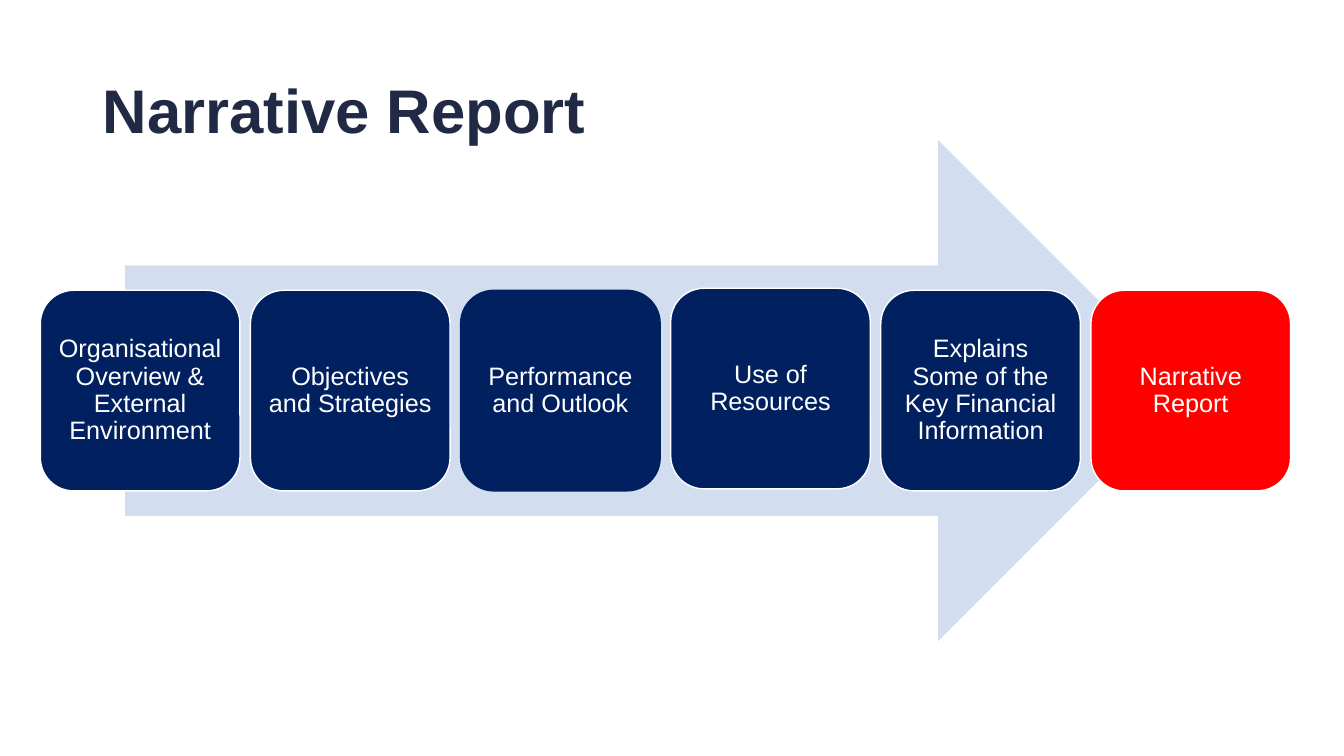
from pptx import Presentation
from pptx.dml.color import RGBColor
from pptx.enum.shapes import MSO_SHAPE
from pptx.enum.text import MSO_ANCHOR, PP_ALIGN
from pptx.util import Inches, Pt

NAVY, RED, WHITE = "002060", "FF0000", "FFFFFF"
LEFT, TOP, PITCH = 0.4, 2.88, 2.084
WIDE, HIGH = 1.98, 1.99
STEPS = [
    ("Organisational Overview & External Environment", NAVY, WHITE, 0),
    ("Objectives and Strategies", NAVY, WHITE, 0),
    ("Performance and Outlook", NAVY, NAVY, 0),
    ("Use of Resources", NAVY, WHITE, 0.02),
    ("Explains Some of the Key Financial Information", NAVY, WHITE, 0),
    ("Narrative Report", RED, WHITE, 0),
]


def paint(target, color):
    target.rgb = RGBColor.from_string(color)


def write(shape, text, size=18, color=WHITE, bold=False, align=PP_ALIGN.CENTER, inset=0.07):
    frame = shape.text_frame
    frame.word_wrap = True
    frame.vertical_anchor = MSO_ANCHOR.MIDDLE
    frame.margin_left = frame.margin_right = Inches(inset)
    frame.margin_top = frame.margin_bottom = Inches(0.07)
    frame.text = text
    para = frame.paragraphs[0]
    para.alignment = align
    para.line_spacing = 0.9
    font = para.runs[0].font
    font.name, font.size, font.bold = "Arial", Pt(size), bold
    paint(font.color, color)


def block(slide, kind, left, top, wide, high, fill, line=None):
    shape = slide.shapes.add_shape(kind, *map(Inches, (left, top, wide, high)))
    shape.shadow.inherit = False
    shape.fill.solid()
    paint(shape.fill.fore_color, fill)
    if line:
        shape.line.width = Pt(1)
        paint(shape.line.color, line)
    else:
        shape.line.fill.background()
    return shape


def head(slide, text):
    title = slide.shapes.title
    title.left, title.top = Inches(0.92), Inches(0.4)
    title.width, title.height = Inches(11.5), Inches(1.45)
    write(title, text, size=44, color="202A44", bold=True, align=PP_ALIGN.LEFT, inset=0.1)


def main():
    deck = Presentation()
    deck.slide_width, deck.slide_height = Inches(13.33), Inches(7.5)
    slide = deck.slides.add_slide(deck.slide_layouts[5])
    head(slide, "Narrative Report")
    block(slide, MSO_SHAPE.RIGHT_ARROW, 1.24, 1.39, 10.55, 4.97, "D2DEEF")
    for col, (text, fill, line, lift) in enumerate(STEPS):
        step = block(slide, MSO_SHAPE.ROUNDED_RECTANGLE,
                     LEFT + col * PITCH, TOP - lift, WIDE, HIGH, fill, line)
        write(step, text)
    deck.save("out.pptx")


if __name__ == "__main__":
    main()
